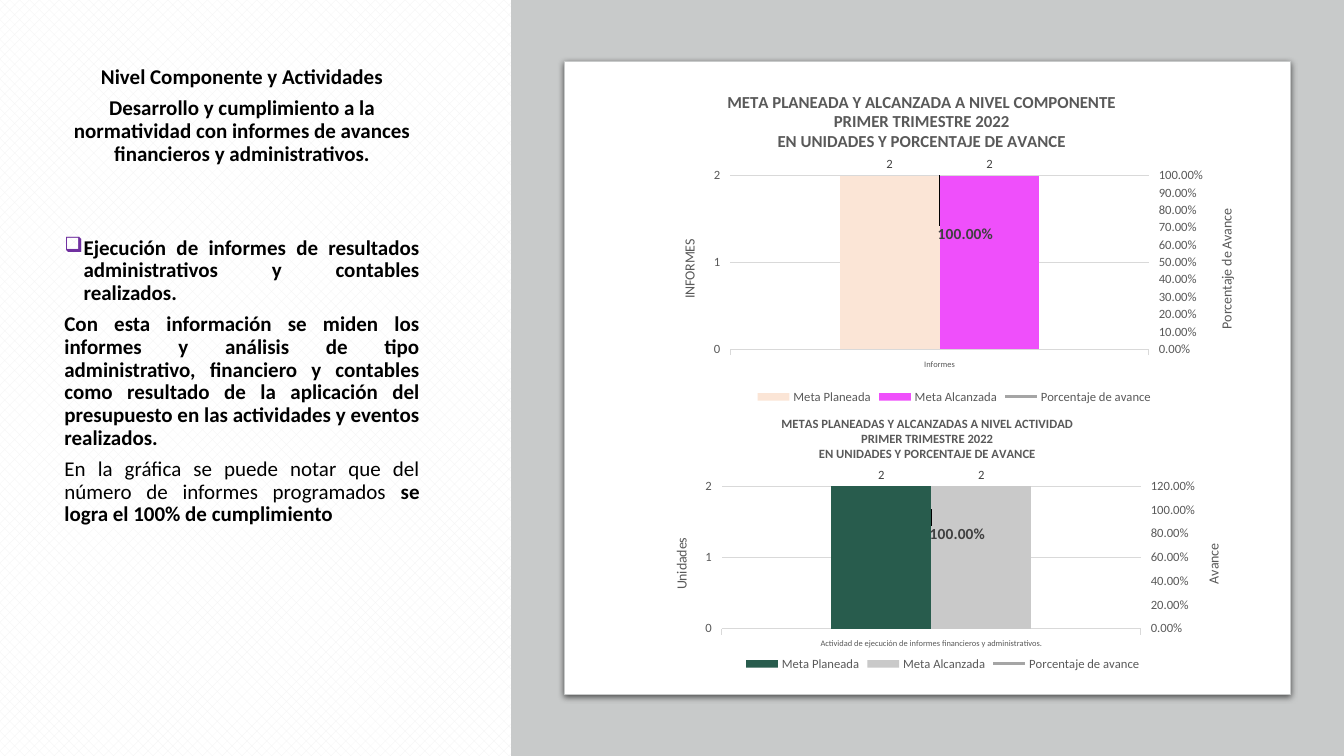
from copy import deepcopy

from pptx import Presentation
from pptx.chart.axis import ValueAxis
from pptx.chart.data import CategoryChartData
from pptx.dml.color import RGBColor
from pptx.enum.chart import XL_CHART_TYPE as ChartType, XL_LABEL_POSITION as LabelPos
from pptx.enum.chart import XL_LEGEND_POSITION as LegendPos, XL_MARKER_STYLE as Marker
from pptx.enum.chart import XL_TICK_MARK as Tick
from pptx.enum.dml import MSO_PATTERN as Pattern
from pptx.enum.shapes import MSO_SHAPE as Shape
from pptx.enum.text import PP_ALIGN as Align
from pptx.oxml import parse_xml
from pptx.oxml.ns import nsdecls, qn
from pptx.util import Inches, Pt

FONT = "Calibri"
COLORS = {"black": "000000", "white": "FFFFFF", "dots": "F2F2F2", "panel": "C8CACA",
          "bullet": "7030A0", "axis": "595959", "label": "404040", "grid": "D9D9D9",
          "progress": "A5A5A5", "peach": "FBE5D6", "magenta": "EF4FFB",
          "green": "285C4D", "silver": "C9C9C9"}

# (runs as (text, bold), alignment, bulleted, space before in points)
PARAGRAPHS = [
    ([("Nivel Componente y Actividades", True)], Align.CENTER, False, 0),
    ([("Desarrollo y cumplimiento a la normatividad con informes de avances "
       "financieros y administrativos.", True)], Align.CENTER, False, 0),
    ([("Ejecución de informes de resultados administrativos y contables realizados.", True)],
     Align.JUSTIFY, True, 45),
    ([("Con esta información se miden los informes y análisis de tipo administrativo, "
       "financiero y contables como resultado de la aplicación del presupuesto en las "
       "actividades y eventos realizados.", True)], Align.JUSTIFY, False, 0),
    ([("En la gráfica se puede notar que del número de informes programados", False),
      (" se logra el 100% de cumplimiento", True)], Align.JUSTIFY, False, 0),
]
SERIES = [("Meta Planeada", 2), ("Meta Alcanzada", 2), ("Porcentaje de avance", 1)]
PERIOD = ["PRIMER TRIMESTRE 2022", "EN UNIDADES Y PORCENTAJE DE AVANCE"]

# Layouts are shares of the chart's own width and height
CHARTS = [
    {"box": (6.54, 0.8, 5.85, 3.25), "category": "Informes",
     "title": ["META PLANEADA Y ALCANZADA A NIVEL COMPONENTE", *PERIOD],
     "title_size": 12, "title_at": (0.11, 0.02), "axes": ("INFORMES", "Porcentaje de Avance"),
     "right": (1, 0.1), "plot": (0.12, 0.29, 0.71, 0.53), "label_shift": (-0.01, 0.18),
     "bars": ("peach", "magenta")},
    {"box": (6.54, 3.98, 5.62, 2.72),
     "category": "Actividad de ejecución de informes financieros y administrativos.",
     "title": ["METAS PLANEADAS Y ALCANZADAS A NIVEL ACTIVIDAD", *PERIOD],
     "title_size": 9, "title_at": (0.21, 0.04), "axes": ("Unidades", "Avance"),
     "right": (1.2, 0.2), "plot": (0.11, 0.31, 0.74, 0.52), "label_shift": (-0.01, 0.09),
     "bars": ("green", "silver")},
]


def rgb(name):
    return RGBColor.from_string(COLORS[name])


def style(font, size, color="axis", bold=False):
    font.name, font.size, font.bold = FONT, Pt(size), bold
    font.color.rgb = rgb(color)


def write(paragraph, text, **font):
    run = paragraph.add_run()
    run.text = text
    style(run.font, **font)


def set_layout(parent, index, box, inner=False):
    """Place a chart part by hand, as x, y and optionally width, height."""
    for old in parent.findall(qn("c:layout")):
        parent.remove(old)
    target = '<c:layoutTarget val="inner"/>' if inner else ""
    modes = '<c:xMode val="edge"/><c:yMode val="edge"/>' if parent.tag != qn("c:dLbl") else ""
    sizes = "".join(f'<c:{key} val="{value}"/>' for key, value in zip("xywh", box))
    parent.insert(index, parse_xml(
        f'<c:layout {nsdecls("c")}><c:manualLayout>{target}{modes}{sizes}'
        '</c:manualLayout></c:layout>'))


def set_axis_title(axis, text):
    frame = axis.axis_title.text_frame
    frame.clear()
    write(frame.paragraphs[0], text, size=10)
    body = frame._txBody.find(qn("a:bodyPr"))
    body.set("rot", "-5400000")
    body.set("vert", "horz")


def set_value(parent, tag, value):
    for child in parent.findall(qn(tag)):
        child.set("val", value)


def add_right_axis(chart, title, maximum, step):
    """Move the last series to a line plot on a percentage axis at the right."""
    area = chart._chartSpace.chart.plotArea
    bars, category, value = (area.find(qn(f"c:{tag}")) for tag in ("barChart", "catAx", "valAx"))
    series = bars.findall(qn("c:ser"))[-1]
    for bar_only in series.findall(qn("c:invertIfNegative")):
        series.remove(bar_only)
    line = parse_xml(
        f'<c:lineChart {nsdecls("c")}><c:grouping val="standard"/><c:varyColors val="0"/>'
        '<c:marker val="1"/><c:axId val="501"/><c:axId val="502"/></c:lineChart>')
    line.insert(2, series)
    bars.addnext(line)

    right, hidden = deepcopy(value), deepcopy(category)
    value.addnext(right)
    right.addnext(hidden)
    for axis, own, other in ((right, "502", "501"), (hidden, "501", "502")):
        set_value(axis, "c:axId", own)
        set_value(axis, "c:crossAx", other)
    set_value(right, "c:axPos", "r")
    set_value(right, "c:crosses", "max")

    ValueAxis(hidden).visible = False
    percent = ValueAxis(right)
    percent.has_major_gridlines = False
    percent.maximum_scale, percent.major_unit = maximum, step
    percent.tick_labels.number_format = "0.00%"
    percent.tick_labels.number_format_is_linked = False
    set_axis_title(percent, title)


def add_progress_chart(slide, box, category, title, title_size, title_at, axes, right,
                       plot, label_shift, bars):
    data = CategoryChartData()
    data.categories = [category]
    for name, amount in SERIES:
        data.add_series(name, [amount])
    chart = slide.shapes.add_chart(
        ChartType.COLUMN_CLUSTERED, *map(Inches, box), data).chart
    style(chart.font, 10, "black")

    heading = chart.chart_title
    for i, text in enumerate(title):
        frame = heading.text_frame
        paragraph = frame.add_paragraph() if i else frame.paragraphs[0]
        paragraph.alignment = Align.CENTER
        write(paragraph, text, size=title_size, bold=True)
    set_layout(heading._element, 1, title_at)

    chart.has_legend = True
    chart.legend.position = LegendPos.BOTTOM
    chart.legend.include_in_layout = False
    style(chart.legend.font, 9)

    across, up = chart.category_axis, chart.value_axis
    style(across.tick_labels.font, 6)
    style(up.tick_labels.font, 9)
    up.minimum_scale, up.maximum_scale, up.major_unit = 0, 2, 1
    up.major_tick_mark = Tick.OUTSIDE
    up.format.line.fill.background()
    for line in (across.format.line, up.major_gridlines.format.line):
        line.color.rgb, line.width = rgb("grid"), Pt(0.75)
    set_axis_title(up, axes[0])
    add_right_axis(chart, axes[1], *right)
    set_layout(chart._chartSpace.chart.plotArea, 0, plot, inner=True)

    columns, progress_plot = chart.plots
    columns.gap_width, columns.vary_by_categories = 219, False
    for series, color in zip(columns.series, bars):
        series.format.fill.solid()
        series.format.fill.fore_color.rgb = rgb(color)
        labels = series.data_labels
        labels.show_value, labels.position = True, LabelPos.OUTSIDE_END
        style(labels.font, 9, "label")

    progress = progress_plot.series[0]
    progress.smooth = False
    progress.marker.style = Marker.NONE
    progress.format.line.color.rgb, progress.format.line.width = rgb("progress"), Pt(2.25)
    label = progress.points[0].data_label
    label.position = LabelPos.RIGHT
    style(label.font, 11, "label", True)
    element = progress._element.find(".//" + qn("c:dLbl"))
    set_layout(element, 1, label_shift)
    element.insert(2, parse_xml(
        f'<c:numFmt {nsdecls("c")} formatCode="0.00%" sourceLinked="0"/>'))


def add_panel(slide, kind, box, fill):
    panel = slide.shapes.add_shape(kind, *map(Inches, box))
    panel.shadow.inherit = False
    panel.fill.solid()
    panel.fill.fore_color.rgb = rgb(fill)
    panel.line.fill.background()
    return panel


def add_explanation(slide):
    frame = slide.shapes.add_textbox(*map(Inches, (0.54, 0.61, 3.72, 5.71))).text_frame
    frame.word_wrap = True
    for i, (runs, alignment, bulleted, before) in enumerate(PARAGRAPHS):
        paragraph = frame.add_paragraph() if i else frame.paragraphs[0]
        paragraph.alignment, paragraph.line_spacing = alignment, 0.9
        paragraph.space_before, paragraph.space_after = Pt(before), Pt(6)
        for text, bold in runs:
            write(paragraph, text, size=15, color="black", bold=bold)
        if bulleted:
            props = paragraph._p.get_or_add_pPr()
            props.set("marL", str(Inches(0.19)))
            props.set("indent", str(-Inches(0.19)))
            props.append(parse_xml(f'<a:buClr {nsdecls("a")}><a:srgbClr '
                                   f'val="{COLORS["bullet"]}"/></a:buClr>'))
            props.append(parse_xml(f'<a:buChar {nsdecls("a")} char="❑"/>'))


def main():
    deck = Presentation()
    deck.slide_width, deck.slide_height = Inches(13.33), Inches(7.5)
    slide = deck.slides.add_slide(deck.slide_layouts[6])
    backdrop = slide.background.fill
    backdrop.patterned()
    backdrop.pattern = Pattern.PERCENT_30
    backdrop.fore_color.rgb, backdrop.back_color.rgb = rgb("dots"), rgb("white")

    add_panel(slide, Shape.RECTANGLE, (5.07, 0, 8.26, 7.5), "panel")
    card = add_panel(slide, Shape.ROUNDED_RECTANGLE, (5.6, 0.61, 7.2, 6.28), "white")
    card.adjustments[0] = 0
    card.line.color.rgb, card.line.width = rgb("panel"), Pt(0.75)
    card._element.spPr.find(qn("a:effectLst")).append(parse_xml(
        f'<a:outerShdw {nsdecls("a")} blurRad="{Pt(4.5)}" dist="{Pt(1.5)}" dir="5400000">'
        f'<a:srgbClr val="{COLORS["black"]}"><a:alpha val="63000"/></a:srgbClr></a:outerShdw>'))
    add_explanation(slide)
    for chart in CHARTS:
        add_progress_chart(slide, **chart)
    deck.save("out.pptx")


if __name__ == "__main__":
    main()
